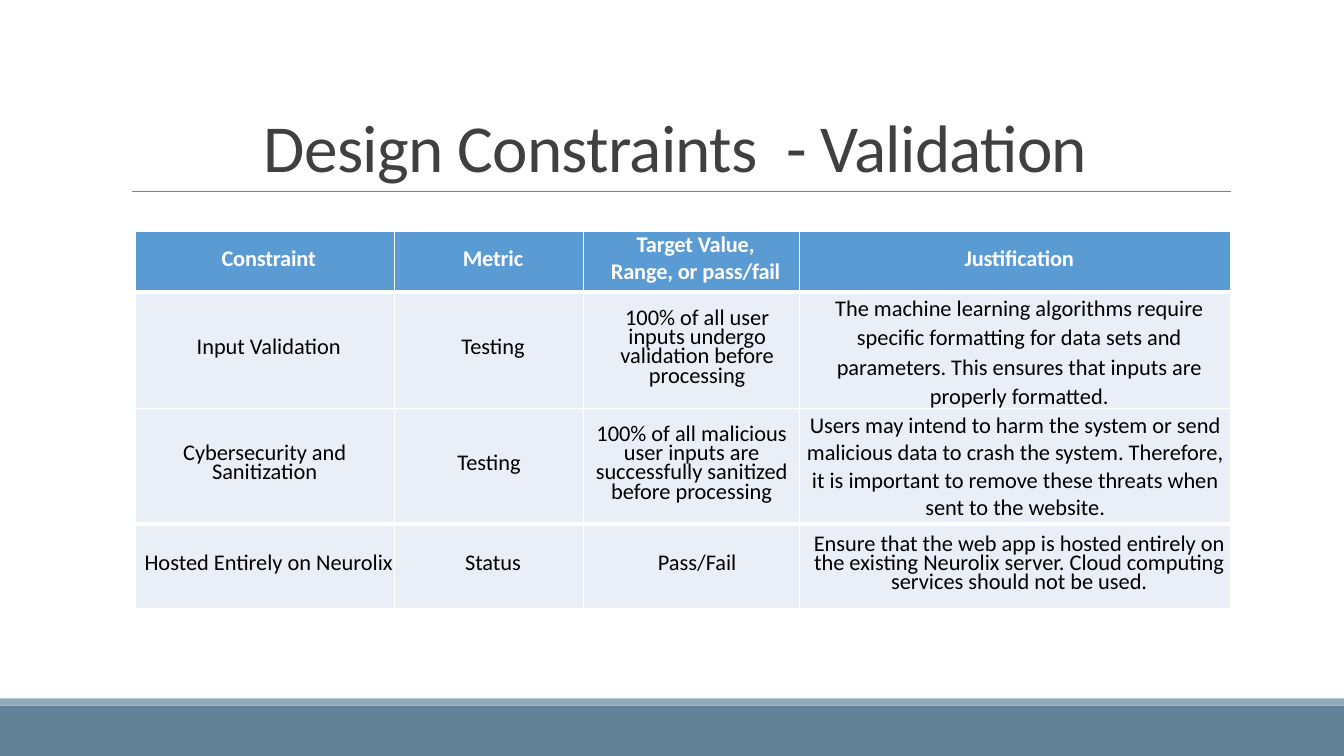
from lxml.etree import SubElement
from pptx import Presentation
from pptx.dml.color import RGBColor
from pptx.enum.shapes import MSO_CONNECTOR as Connector, MSO_SHAPE as Shape
from pptx.enum.text import MSO_ANCHOR as Anchor, PP_ALIGN as Align
from pptx.oxml import parse_xml
from pptx.oxml.ns import nsdecls, qn
from pptx.util import Inches, Pt

WHITE = RGBColor(0xFF, 0xFF, 0xFF)
BLACK = RGBColor(0, 0, 0)
TITLE_GREY = RGBColor(0x40, 0x40, 0x40)
RULE_GREY = RGBColor(0x80, 0x80, 0x80)
SLATE = RGBColor(0x61, 0x81, 0x97)
LIGHT_SLATE = RGBColor(0x92, 0xA9, 0xB9)
HEADER_BLUE = RGBColor(0x5B, 0x9B, 0xD4)
BODY_BLUE = RGBColor(0xEA, 0xEE, 0xF7)

TIGHT = Pt(13.7)
COLUMN_WIDTHS = [2.57, 1.88, 2.14, 4.28]
ROW_HEIGHTS = [0.6, 1.15, 1.15, 0.84]
CONSTRAINTS = [
    ["Constraint", "Metric", "Target Value,\nRange, or pass/fail", "Justification"],
    ["Input Validation", "Testing",
     "100% of all user inputs undergo validation before processing",
     "The machine learning algorithms require specific formatting for data sets and "
     "parameters. This ensures that inputs are properly formatted."],
    ["Cybersecurity and Sanitization", "Testing",
     "100% of all malicious user inputs are successfully sanitized before processing",
     "Users may intend to harm the system or send malicious data to crash the system. "
     "Therefore, it is important to remove these threats when sent to the website."],
    ["Hosted Entirely on Neurolix", "Status", "Pass/Fail",
     "Ensure that the web app is hosted entirely on the existing Neurolix server. "
     "Cloud computing services should not be used."],
]
# Left indents by row, and the cells whose line spacing is not tight
INDENTS = [[0.08] * 4, [0.08, 0.08, 0.11, 0.08], [0] * 4, [0.08, 0.08, 0.11, 0.08]]
LOOSE_SPACING = {(1, 3): 1.07, (2, 3): 1.0}


class SlideBuilder:
    font = "Calibri"

    def __init__(self, slide):
        self.slide = slide

    def bar(self, top, height, color):
        bar = self.slide.shapes.add_shape(
            Shape.RECTANGLE, 0, Inches(top), Inches(13.33), Inches(height))
        bar.shadow.inherit = False
        bar.fill.solid()
        bar.fill.fore_color.rgb = color
        bar.line.fill.background()

    def rule(self, left, right, y, color):
        rule = self.slide.shapes.add_connector(
            Connector.STRAIGHT, Inches(left), Inches(y), Inches(right), Inches(y))
        rule.line.color.rgb = color
        rule.line.width = Pt(0.5)
        SubElement(rule._element.spPr, qn("a:effectLst"))

    def style(self, paragraph, size, color, line_spacing, bold=False, tracking=0.0):
        paragraph.alignment = Align.CENTER
        paragraph.line_spacing = line_spacing
        for run in paragraph.runs:
            run.font.name = self.font
            run.font.size = Pt(size)
            run.font.bold = bold
            run.font.color.rgb = color
            run._r.get_or_add_rPr().set("spc", str(round(tracking * 100)))

    def title(self, text, left, top, width, height):
        heading = self.slide.shapes.add_textbox(
            Inches(left), Inches(top), Inches(width), Inches(height)).text_frame
        heading.word_wrap = True
        heading.vertical_anchor = Anchor.BOTTOM
        heading.text = text
        self.style(heading.paragraphs[0], 48, TITLE_GREY, 0.85, tracking=-0.5)

    def table(self, left, top):
        table = self.slide.shapes.add_table(
            len(ROW_HEIGHTS), len(COLUMN_WIDTHS), Inches(left), Inches(top),
            Inches(sum(COLUMN_WIDTHS)), Inches(sum(ROW_HEIGHTS))).table
        for column, width in zip(table.columns, COLUMN_WIDTHS):
            column.width = Inches(width)
        for row, height in zip(table.rows, ROW_HEIGHTS):
            row.height = Inches(height)
        for r, texts in enumerate(CONSTRAINTS):
            for c, text in enumerate(texts):
                self.cell(table.cell(r, c), text, r == 0, INDENTS[r][c],
                          LOOSE_SPACING.get((r, c), TIGHT))
                # Thick borders lie below the header and below the second body row
                thick_top = r % 2 == 1
                self.borders(table.cell(r, c), top=3 if thick_top else 1,
                             bottom=1 if thick_top else 3)

    def cell(self, cell, text, is_header, indent, line_spacing):
        cell.fill.solid()
        cell.fill.fore_color.rgb = HEADER_BLUE if is_header else BODY_BLUE
        cell.vertical_anchor = Anchor.MIDDLE
        cell.margin_left = cell.margin_top = cell.margin_right = Inches(0.01)
        cell.margin_bottom = 0
        cell.text_frame.text = text
        for i, paragraph in enumerate(cell.text_frame.paragraphs):
            self.style(paragraph, 16, WHITE if is_header else BLACK,
                       line_spacing if i == 0 else 1.0, is_header,
                       -0.1 if is_header else 0)
            properties = paragraph._p.get_or_add_pPr()
            properties.set("marL", str(Inches(indent)))
            properties.set("indent", "0")

    def borders(self, cell, top, bottom):
        sides = {"lnL": 1, "lnR": 1, "lnT": top, "lnB": bottom}
        for i, (side, width) in enumerate(sides.items()):
            cell._tc.get_or_add_tcPr().insert(i, parse_xml(
                f'<a:{side} {nsdecls("a")} w="{Pt(width)}"><a:solidFill>'
                f'<a:srgbClr val="{WHITE}"/></a:solidFill></a:{side}>'))


def main():
    deck = Presentation()
    deck.slide_width, deck.slide_height = Inches(13.33), Inches(7.5)
    builder = SlideBuilder(deck.slides.add_slide(deck.slide_layouts[6]))

    # Footer bands and title rule
    builder.bar(7, 0.5, SLATE)
    builder.bar(6.93, 0.07, LIGHT_SLATE)
    builder.rule(1.31, 12.21, 1.9, RULE_GREY)

    # Title and constraints table
    builder.title("Design Constraints  - Validation", 1.2, 0.31, 11, 1.59)
    builder.table(1.34, 2.3)

    deck.save("out.pptx")


if __name__ == "__main__":
    main()
